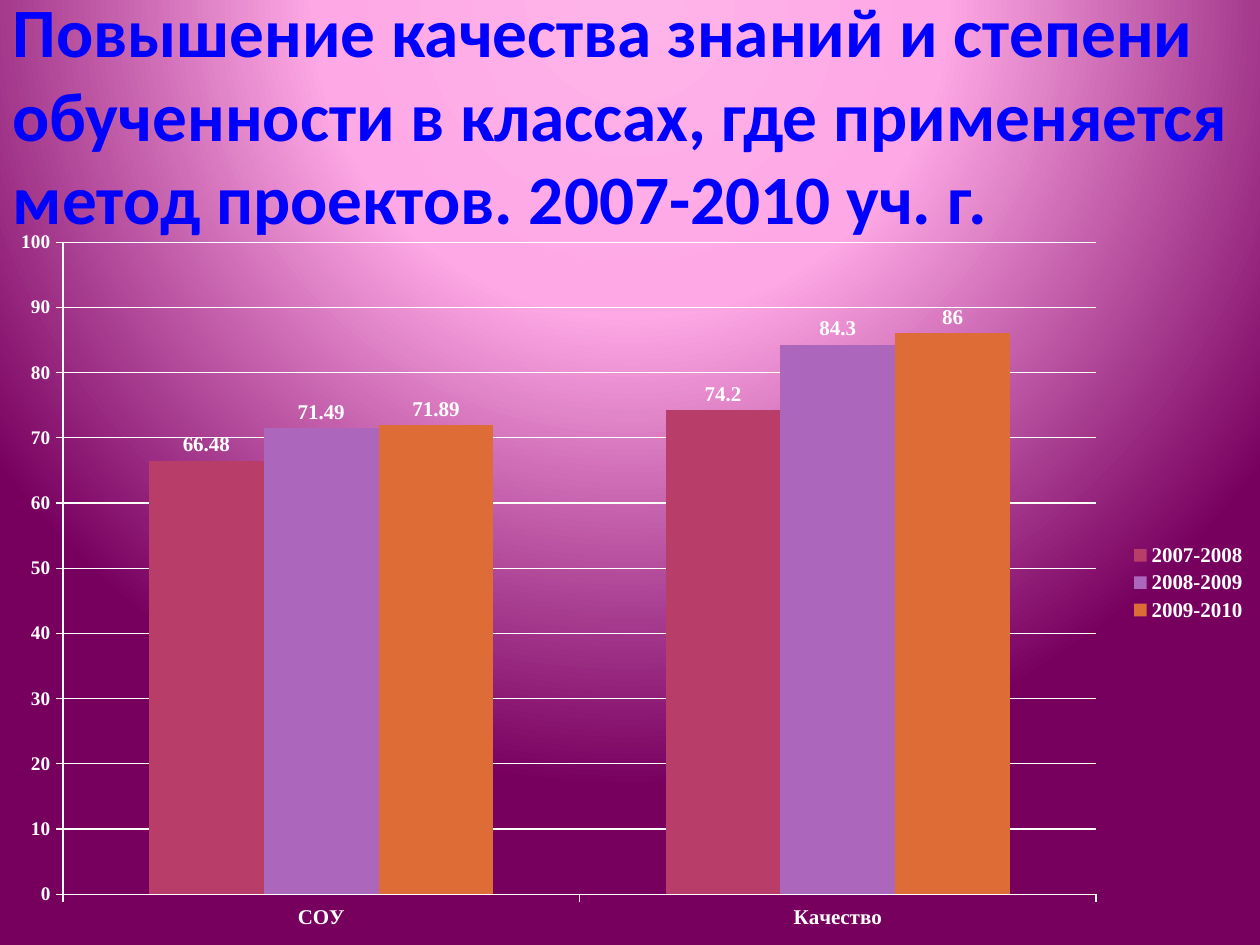
from lxml import etree
from pptx import Presentation
from pptx.chart.data import CategoryChartData
from pptx.dml.color import RGBColor
from pptx.enum.chart import XL_CHART_TYPE, XL_LABEL_POSITION, XL_LEGEND_POSITION, XL_TICK_MARK
from pptx.enum.text import MSO_ANCHOR, PP_ALIGN
from pptx.oxml import parse_xml
from pptx.oxml.ns import nsdecls, qn
from pptx.util import Inches, Pt

TITLE = ("Повышение качества знаний и степени обученности в классах, "
         "где применяется метод проектов. 2007-2010 уч. г.")
CATEGORIES = ["СОУ", "Качество"]
SERIES = [
    ("2007-2008", (66.48, 74.2), "B83D68"),
    ("2008-2009", (71.49, 84.3), "AC66BB"),
    ("2009-2010", (71.89, 86), "DE6C36"),
]
COLORS = {"title": "0000FF", "chart": "FFFFFF"}
BACKGROUND = [(0, "FFB4E9"), (40, "FEA8E5"), (100, "77005F")]
PLOT_AREA = {"x": 0.05, "y": 0.03, "w": 0.82, "h": 0.9}


def rgb(name):
    return RGBColor.from_string(COLORS[name])


def set_font(font, name, size, color):
    font.name = name
    font.size = Pt(size)
    font.bold = True
    font.color.rgb = rgb(color)


def set_background(slide):
    """Fill the slide with a circular gradient centred above its top edge."""
    slide.background.fill.solid()
    stops = "".join(f'<a:gs pos="{pos * 1000}"><a:srgbClr val="{color}"/></a:gs>'
                    for pos, color in BACKGROUND)
    gradient = parse_xml(
        f'<a:gradFill {nsdecls("a")} rotWithShape="1"><a:gsLst>{stops}</a:gsLst>'
        '<a:path path="circle"><a:fillToRect l="50000" t="-80000" r="50000" b="180000"/>'
        '</a:path></a:gradFill>')
    solid = slide.element.find(".//" + qn("p:bgPr")).find(qn("a:solidFill"))
    solid.getparent().replace(solid, gradient)


def set_plot_area(chart):
    """Fix the inner plot area as fractions of the chart."""
    plot_area = chart.element.find(".//" + qn("c:plotArea"))
    for old in plot_area.findall(qn("c:layout")):
        plot_area.remove(old)
    layout = etree.Element(qn("c:layout"))
    manual = etree.SubElement(layout, qn("c:manualLayout"))
    settings = [("layoutTarget", "inner"), ("xMode", "edge"), ("yMode", "edge")]
    for tag, value in settings + list(PLOT_AREA.items()):
        etree.SubElement(manual, qn(f"c:{tag}")).set("val", str(value))
    plot_area.insert(0, layout)


def add_title(slide):
    title = slide.shapes.title
    title.left, title.top = Inches(0), Inches(0)
    title.width, title.height = Inches(10), Inches(1.8)
    tf = title.text_frame
    tf.text = TITLE
    tf.word_wrap = True
    tf.vertical_anchor = MSO_ANCHOR.MIDDLE
    p = tf.paragraphs[0]
    p.alignment = PP_ALIGN.LEFT
    set_font(p.runs[0].font, "Calibri", 39.6, "title")


def add_results_chart(slide):
    data = CategoryChartData()
    data.categories = CATEGORIES
    for name, values, _ in SERIES:
        data.add_series(name, values)
    chart = slide.shapes.add_chart(
        XL_CHART_TYPE.COLUMN_CLUSTERED, Inches(0), Inches(1.75),
        Inches(10), Inches(5.75), data).chart
    chart.has_title = False
    set_font(chart.font, "Times New Roman", 12, "chart")
    set_plot_area(chart)

    chart.has_legend = True
    chart.legend.position = XL_LEGEND_POSITION.RIGHT
    chart.legend.include_in_layout = False
    set_font(chart.legend.font, "Times New Roman", 12, "chart")

    value_axis = chart.value_axis
    value_axis.minimum_scale, value_axis.maximum_scale = 0, 100
    value_axis.major_unit = 10
    value_axis.has_major_gridlines = True
    for axis, size in ((chart.category_axis, 12), (value_axis, 11)):
        set_font(axis.tick_labels.font, "Times New Roman", size, "chart")
        axis.major_tick_mark = XL_TICK_MARK.OUTSIDE
    for line in (chart.category_axis.format.line, value_axis.format.line,
                 value_axis.major_gridlines.format.line):
        line.color.rgb = rgb("chart")
        line.width = Pt(0.75)

    plot = chart.plots[0]
    plot.gap_width, plot.overlap = 150, 0
    plot.vary_by_categories = False
    for series, (_, _, color) in zip(plot.series, SERIES):
        series.format.fill.solid()
        series.format.fill.fore_color.rgb = RGBColor.from_string(color)
        labels = series.data_labels
        labels.show_value = True
        labels.position = XL_LABEL_POSITION.OUTSIDE_END
        set_font(labels.font, "Times New Roman", 12, "chart")


def main():
    prs = Presentation()
    prs.slide_width, prs.slide_height = Inches(10), Inches(7.5)
    slide = prs.slides.add_slide(prs.slide_layouts[5])
    set_background(slide)
    add_title(slide)
    add_results_chart(slide)
    prs.save("out.pptx")


if __name__ == "__main__":
    main()
